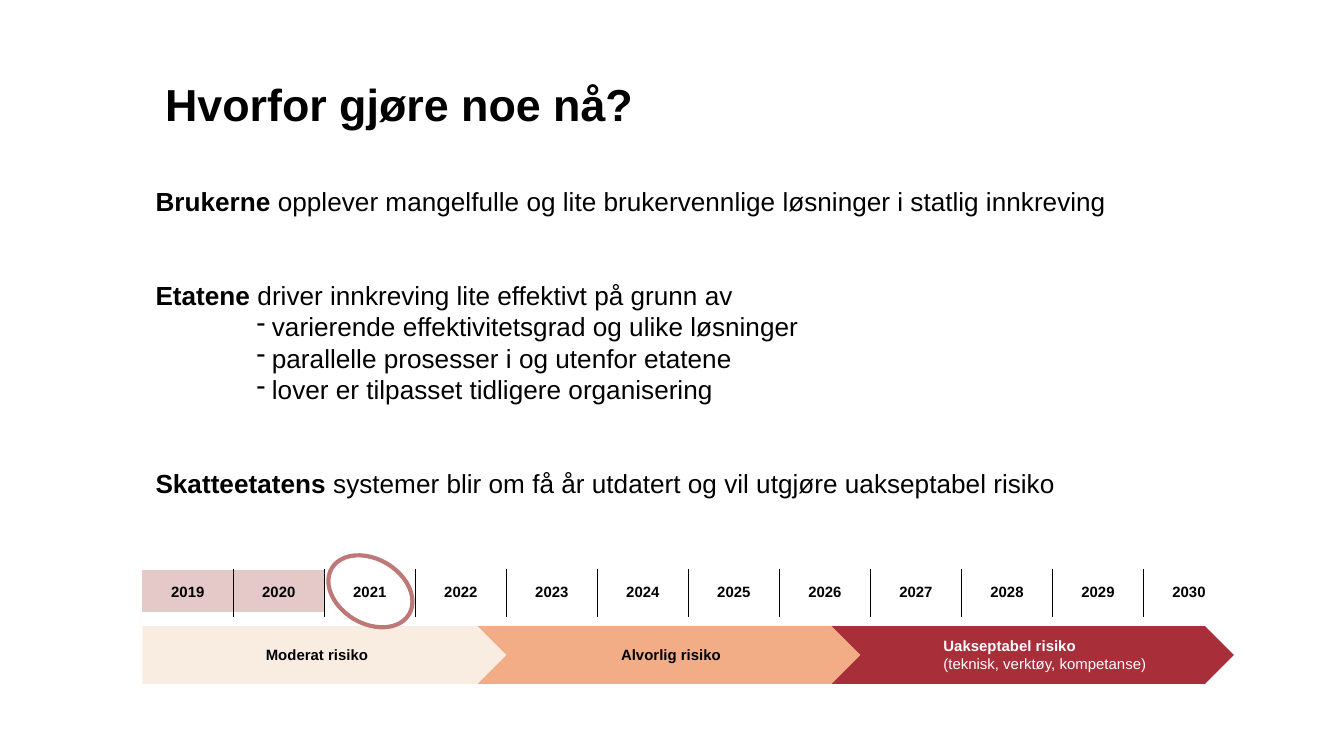
import pptx
import pptx.dml.color
import pptx.enum.shapes
import pptx.enum.text
import pptx.oxml
import pptx.util
from lxml import etree

Cm = pptx.util.Cm
Pt = pptx.util.Pt
RGBColor = pptx.dml.color.RGBColor
MSO_SHAPE = pptx.enum.shapes.MSO_SHAPE
PP_ALIGN = pptx.enum.text.PP_ALIGN
MIDDLE = pptx.enum.text.MSO_ANCHOR.MIDDLE
DRAWING = "http://schemas.openxmlformats.org/drawingml/2006/main"

theme = {
    "font": "Arial",
    "title": Pt(24), "body": Pt(14), "label": Pt(8),
    "black": RGBColor.from_string("000000"),
    "white": RGBColor.from_string("FFFFFF"),
    "past": RGBColor.from_string("E5C9C9"),
    "ring": RGBColor.from_string("BE7878"),
    "moderate": RGBColor.from_string("F9EDE2"),
    "serious": RGBColor.from_string("F2AD87"),
    "unacceptable": RGBColor.from_string("A82E39"),
}


def write(paragraph, size, color, bold="", plain="", **formats):
    for name, value in formats.items():
        setattr(paragraph, name, value)
    for text, is_bold in ((bold, True), (plain, False)):
        if text:
            run = paragraph.add_run()
            run.text = text
            run.font.color.rgb = theme[color]
            for name, value in {"name": theme["font"], "size": theme[size], "bold": is_bold}.items():
                setattr(run.font, name, value)


def set_border(cell, side, color, width):
    border = etree.SubElement(cell._tc.get_or_add_tcPr(), f"{{{DRAWING}}}{side}", w=str(Pt(width)))
    if color is None:
        etree.SubElement(border, f"{{{DRAWING}}}noFill")
    else:
        fill = etree.SubElement(border, f"{{{DRAWING}}}solidFill")
        etree.SubElement(fill, f"{{{DRAWING}}}srgbClr", val=str(theme[color]))


presentation = pptx.Presentation()
presentation.slide_width, presentation.slide_height = Cm(25.4), Cm(14.2)
slide = presentation.slides.add_slide(presentation.slide_layouts[6])

title = slide.shapes.add_textbox(Cm(3.12), Cm(1.24), Cm(15.52), Cm(1.35)).text_frame
for name, value in {"word_wrap": True, "margin_left": 0, "margin_right": 0,
                    "margin_top": 0, "margin_bottom": 0}.items():
    setattr(title, name, value)
write(title.paragraphs[0], "title", "black", "Hvorfor gjøre noe nå?", line_spacing=1.2)

body = slide.shapes.add_textbox(Cm(2.69), Cm(3.38), Cm(20.04), Cm(6.25)).text_frame
body.word_wrap = True
statements = [
    ("Brukerne", " opplever mangelfulle og lite brukervennlige løsninger i statlig innkreving", []),
    ("Etatene", " driver innkreving lite effektivt på grunn av", [
        "varierende effektivitetsgrad og ulike løsninger",
        "parallelle prosesser i og utenfor etatene",
        "lover er tilpasset tidligere organisering",
    ]),
    ("Skatteetatens", " systemer blir om få år utdatert og vil utgjøre uakseptabel risiko", []),
]
for index, (subject, statement, reasons) in enumerate(statements):
    paragraph = body.add_paragraph() if index else body.paragraphs[0]
    write(paragraph, "body", "black", subject, statement,
          line_spacing=Pt(16.8), space_before=Pt(33.6 if index else 0))
    for reason in reasons:
        paragraph = body.add_paragraph()
        properties = paragraph._p.get_or_add_pPr()
        properties.set("marL", str(Cm(2.2)))
        properties.set("indent", str(Cm(-0.29)))
        etree.SubElement(properties, f"{{{DRAWING}}}buChar", char="-")
        write(paragraph, "body", "black", plain=reason, line_spacing=Pt(16.8))

years = range(2019, 2031)
column_width = Cm(1.72)
timeline = slide.shapes.add_table(
    1, len(years), Cm(2.69), Cm(10.77), column_width * len(years), Cm(0.84)).table
timeline.first_row = False
timeline.horz_banding = False
for column, year in enumerate(years):
    timeline.columns[column].width = column_width
    cell = timeline.cell(0, column)
    cell.vertical_anchor = MIDDLE
    set_border(cell, "lnL", None if year == years[0] else "black", 1)
    set_border(cell, "lnR", None if year == years[-1] else "black", 1)
    set_border(cell, "lnT", "white", 1)
    set_border(cell, "lnB", "white", 3)
    if year < 2021:
        cell.fill.solid()
        cell.fill.fore_color.rgb = theme["past"]
    else:
        cell.fill.background()
    write(cell.text_frame.paragraphs[0], "label", "black", str(year), alignment=PP_ALIGN.CENTER)

risks = [
    ("unacceptable", 15.62, 7.7, 2.21, "white", PP_ALIGN.LEFT,
     [("Uakseptabel risiko", ""), ("", "(teknisk, verktøy, kompetanse)")]),
    ("serious", 8.84, 7.42, 0.79, "black", PP_ALIGN.CENTER, [("Alvorlig risiko", "")]),
    ("moderate", 2.69, 6.88, 0.25, "black", PP_ALIGN.CENTER, [("Moderat risiko", "")]),
]
for level, left, width, inset, text_color, alignment, lines in risks:
    shape = slide.shapes.add_shape(MSO_SHAPE.PENTAGON, Cm(left), Cm(11.84), Cm(width), Cm(1.09))
    shape.shadow.inherit = False
    shape.fill.solid()
    shape.fill.fore_color.rgb = theme[level]
    shape.line.fill.background()
    frame = shape.text_frame
    for name, value in {"word_wrap": True, "vertical_anchor": MIDDLE, "margin_left": Cm(inset)}.items():
        setattr(frame, name, value)
    for index, (bold, plain) in enumerate(lines):
        paragraph = frame.add_paragraph() if index else frame.paragraphs[0]
        write(paragraph, "label", text_color, bold, plain, alignment=alignment)

ring = slide.shapes.add_shape(MSO_SHAPE.OVAL, Cm(6.15), Cm(10.57), Cm(1.7), Cm(1.22))
ring.rotation = 30.7
ring.shadow.inherit = False
ring.fill.background()
ring.line.color.rgb = theme["ring"]
ring.line.width = Pt(2.25)

presentation.save("out.pptx")
